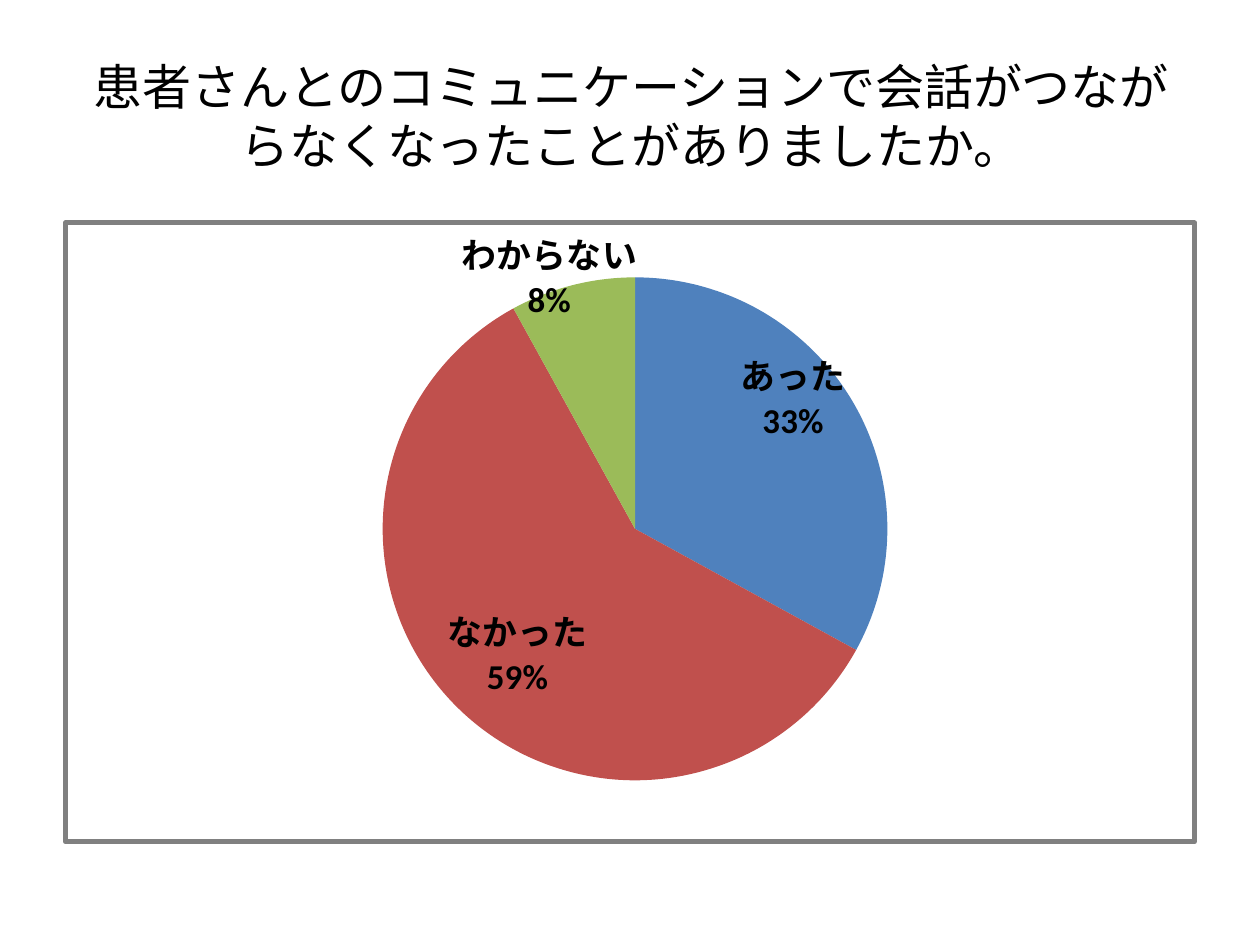
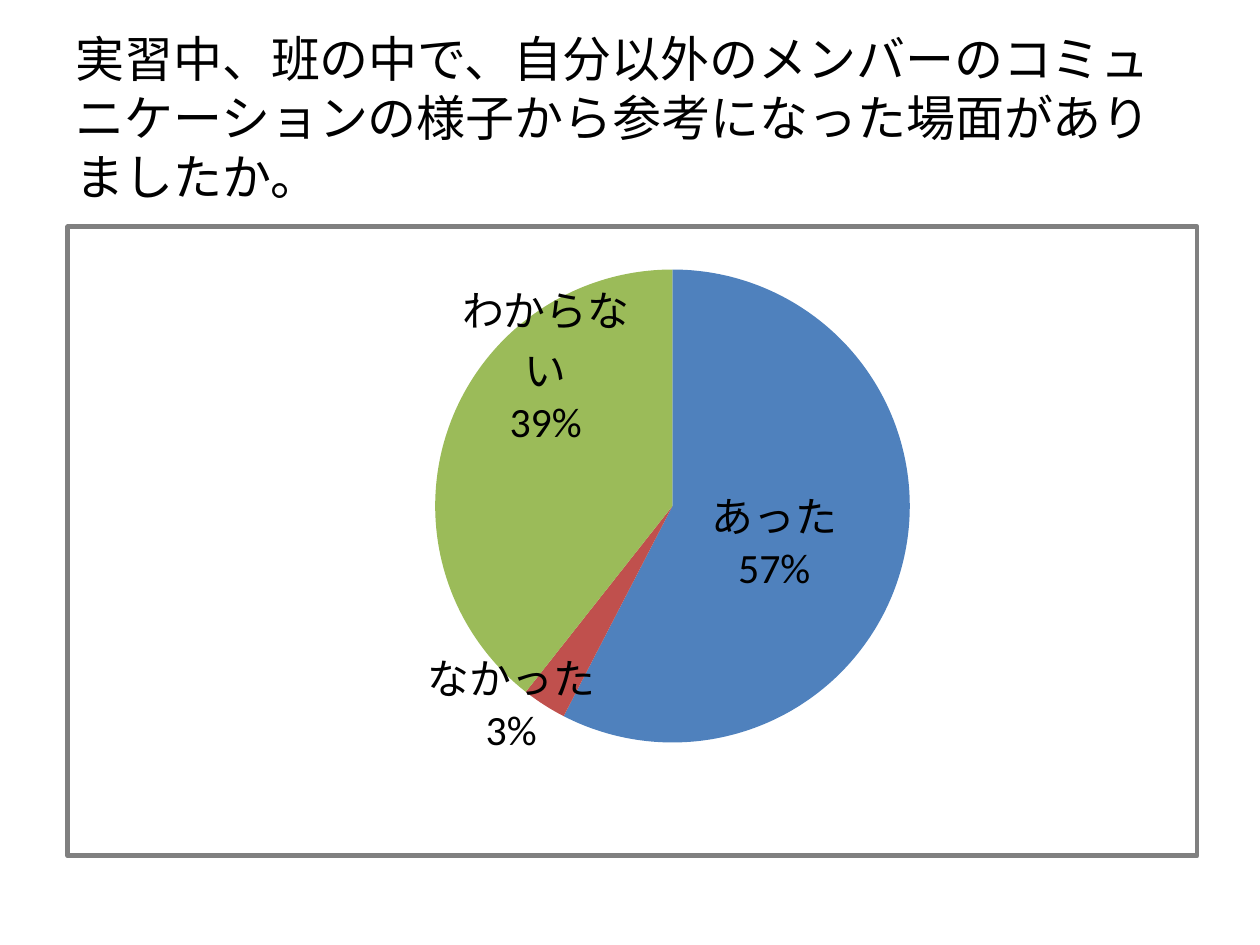
from math import cos, pi, sin

from pptx import Presentation
from pptx.chart.data import CategoryChartData
from pptx.dml.color import RGBColor
from pptx.enum.chart import XL_CHART_TYPE
from pptx.enum.text import MSO_ANCHOR, PP_ALIGN
from pptx.oxml import parse_xml
from pptx.oxml.ns import nsdecls
from pptx.util import Pt

FONT = "Calibri"
BLACK = "000000"
BORDER = "808080"
ANSWERS = {"あった": "4F81BD", "なかった": "C0504D", "わからない": "9BBB59"}


def color(value):
    return RGBColor.from_string(value)


def set_font(font, size, bold=False):
    font.name = FONT
    font.size = Pt(size)
    font.bold = bold
    font.color.rgb = color(BLACK)


def add_title(slide, box, text, align):
    tf = slide.shapes.add_textbox(*map(Pt, box)).text_frame
    tf.word_wrap = True
    tf.vertical_anchor = MSO_ANCHOR.MIDDLE
    p = tf.paragraphs[0]
    p.text = text
    p.alignment = align
    set_font(p.font, 28)


def manual_layout(x, y, size=None):
    target = mode = extent = ""
    if size:
        target = '<c:layoutTarget val="inner"/>'
        mode = '<c:xMode val="edge"/><c:yMode val="edge"/>'
        extent = f'<c:w val="{size[0]}"/><c:h val="{size[1]}"/>'
    return (f'<c:layout {nsdecls("c")}><c:manualLayout>{target}{mode}'
            f'<c:x val="{x:.3f}"/><c:y val="{y:.3f}"/>{extent}'
            '</c:manualLayout></c:layout>')


def add_border(chart):
    sp_pr = parse_xml(
        f'<c:spPr {nsdecls("c", "a")}><a:noFill/><a:ln w="{Pt(2.75)}">'
        f'<a:solidFill><a:srgbClr val="{BORDER}"/></a:solidFill>'
        '<a:round/></a:ln></c:spPr>')
    chart._chartSpace.find("{*}chart").addnext(sp_pr)


def place_labels(labels, values, pie, centers, size, bold):
    left, top, width, height = pie
    start = 0
    for i, (value, (x, y)) in enumerate(zip(values, centers)):
        angle = 2 * pi * (start + value / 2) / sum(values)
        start += value
        dx = x - (left + width / 2 + width / 4 * sin(angle))
        dy = y - (top + height / 2 - height / 4 * cos(angle))
        labels._element.insert(i, parse_xml(
            f'<c:dLbl {nsdecls("c", "a")}><c:idx val="{i}"/>{manual_layout(dx, dy)}'
            '<c:numFmt formatCode="0&quot;%&quot;" sourceLinked="0"/>'
            '<c:spPr><a:noFill/><a:ln><a:noFill/></a:ln></c:spPr>'
            '<c:txPr><a:bodyPr/><a:p><a:pPr>'
            f'<a:defRPr sz="{size * 100}" b="{int(bold)}"><a:solidFill>'
            f'<a:srgbClr val="{BLACK}"/></a:solidFill><a:latin typeface="{FONT}"/>'
            '</a:defRPr></a:pPr><a:endParaRPr/></a:p></c:txPr>'
            '<c:dLblPos val="ctr"/><c:showLegendKey val="0"/><c:showVal val="1"/>'
            '<c:showCatName val="1"/><c:showSerName val="0"/><c:showPercent val="0"/>'
            '<c:showBubbleSize val="0"/><c:separator>\n</c:separator></c:dLbl>'))


def add_pie(slide, box, values, pie, centers, size, bold):
    data = CategoryChartData()
    data.categories = list(ANSWERS)
    data.add_series("Series 1", values)
    chart = slide.shapes.add_chart(XL_CHART_TYPE.PIE, *map(Pt, box), data).chart
    chart.has_title = False
    chart.has_legend = False
    set_font(chart.font, 10)
    add_border(chart)

    area = chart._chartSpace.find(".//{*}plotArea")
    for layout in area.findall("{*}layout"):
        area.remove(layout)
    area.insert(0, parse_xml(manual_layout(*pie[:2], pie[2:])))

    plot = chart.plots[0]
    plot.vary_by_categories = True
    series = plot.series[0]
    for i, value in enumerate(ANSWERS.values()):
        fill = series.points[i].format.fill
        fill.solid()
        fill.fore_color.rgb = color(value)

    labels = series.data_labels
    labels.show_value = True
    labels.show_category_name = True
    set_font(labels.font, size, bold)
    place_labels(labels, values, pie, centers, size, bold)


def add_question(prs, title_box, title, align, **chart):
    slide = prs.slides.add_slide(prs.slide_layouts[6])
    add_title(slide, title_box, title, align)
    add_pie(slide, **chart)


def main():
    prs = Presentation()
    prs.slide_width, prs.slide_height = Pt(720), Pt(540)
    add_question(
        prs, (36.7, 20.9, 648, 90),
        "患者さんとのコミュニケーションで会話がつながらなくなったことがありましたか。",
        PP_ALIGN.CENTER,
        box=(36, 126, 648, 356.4), values=(33, 59, 8),
        pie=(0.281, 0.088, 0.447, 0.813),
        centers=((0.645, 0.28), (0.4, 0.693), (0.429, 0.084)),
        size=20, bold=True)
    add_question(
        prs, (36, 21.6, 648, 90),
        "実習中、班の中で、自分以外のメンバーのコミュニケーションの様子から参考になった場面がありましたか。",
        PP_ALIGN.LEFT,
        box=(37.4, 128.2, 648, 362.2), values=(57, 3, 39),
        pie=(0.325, 0.068, 0.421, 0.752),
        centers=((0.626, 0.498), (0.393, 0.755), (0.423, 0.218)),
        size=24, bold=False)
    prs.save("out.pptx")


if __name__ == "__main__":
    main()
